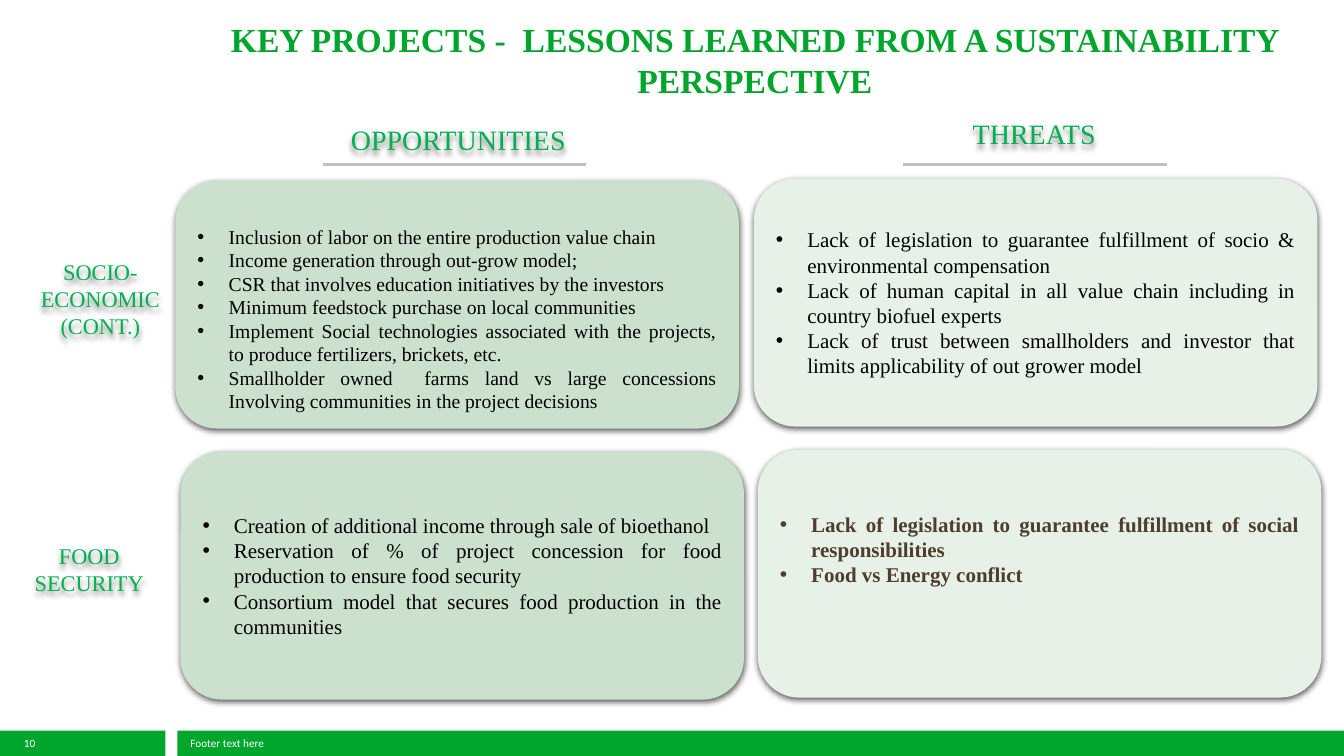
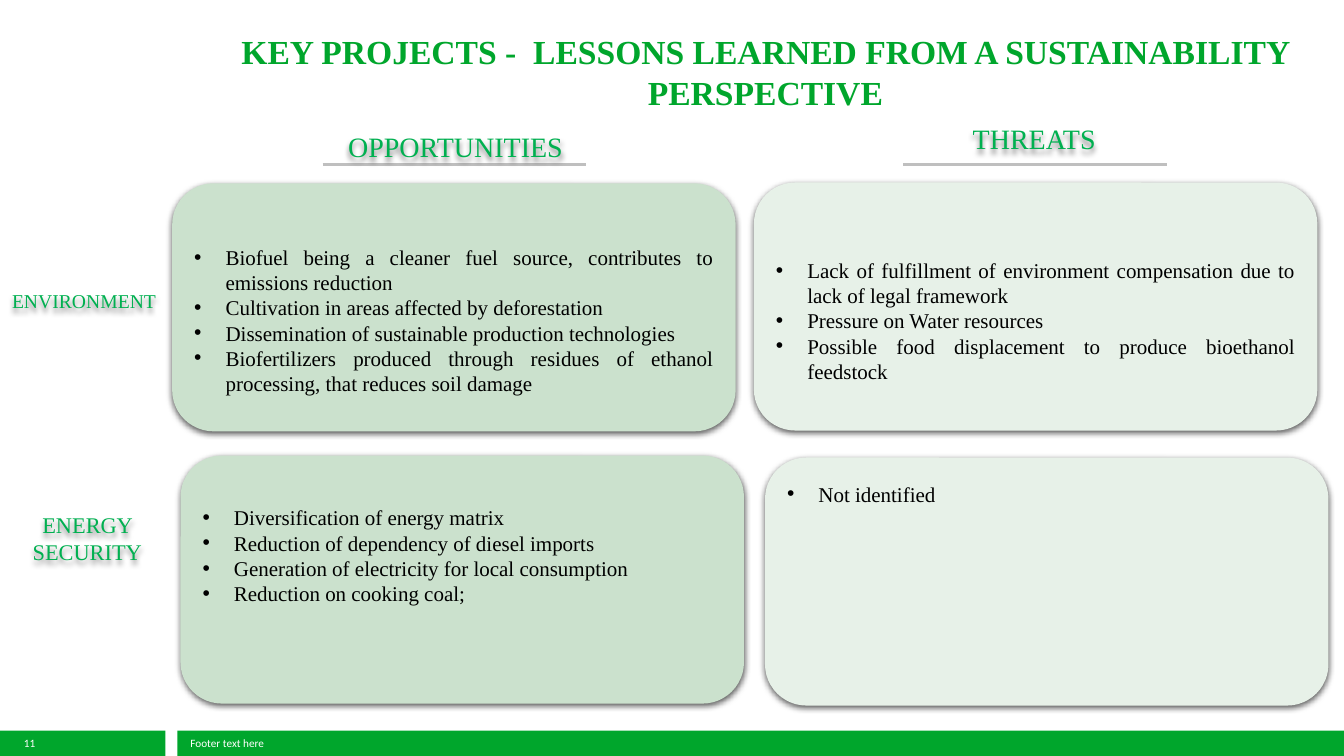
from dataclasses import dataclass
from typing import Any

from lxml import etree
from pptx import Presentation
from pptx.dml.color import RGBColor
from pptx.enum.shapes import MSO_CONNECTOR, MSO_SHAPE
from pptx.enum.text import MSO_ANCHOR, PP_ALIGN
from pptx.oxml.ns import qn
from pptx.util import Cm, Pt

# Enum members
RECT, ROUNDED = MSO_SHAPE.RECTANGLE, MSO_SHAPE.ROUNDED_RECTANGLE
STRAIGHT = MSO_CONNECTOR.STRAIGHT
TOP, MIDDLE = MSO_ANCHOR.TOP, MSO_ANCHOR.MIDDLE
LEFT, CENTER = PP_ALIGN.LEFT, PP_ALIGN.CENTER
RIGHT, JUSTIFY = PP_ALIGN.RIGHT, PP_ALIGN.JUSTIFY

# Colours
BRAND_GREEN = RGBColor(0x00, 0xA6, 0x2C)
LABEL_GREEN = RGBColor(0x00, 0xB0, 0x50)
OPPORTUNITY_FILL = RGBColor(0xCB, 0xE1, 0xCD)
THREAT_FILL = RGBColor(0xE7, 0xF1, 0xE8)
RULE_GREY = RGBColor(0xBF, 0xBF, 0xBF)
BROWN = RGBColor(0x4D, 0x3E, 0x2F)
BLACK = RGBColor(0x00, 0x00, 0x00)
WHITE = RGBColor(0xFF, 0xFF, 0xFF)

# Text formats
SERIF, SANS = "Times New Roman", "Calibri"
TITLE_FORMAT = {"name": SERIF, "size": Pt(24), "bold": True}
HEADING_FORMAT = {"name": SERIF, "size": Pt(20)}
FOOTER_FORMAT = {"name": SANS, "size": Pt(8)}

# Shared layout, in centimetres
SLIDE_W, SLIDE_H = 33.87, 19.05
CARD_W, CARD_H = 14.2, 6.25
LABEL_W, LABEL_H = 4.5, 3.28
HEADING_H = 1.04
TITLE_H = 2.31
FOOTER_H = 0.64
FOOTER_TOP = SLIDE_H - FOOTER_H
FOOTER_BANDS = ((0, 4.17), (4.47, SLIDE_W - 4.47))
RULE_Y, RULE_W = 4.14, 6.65
RULE_LEFTS = (8.13, 22.76)
INSET_Y = 0.13
BULLET_INDENT = 0.79

TITLE = "KEY PROJECTS -  LESSONS LEARNED FROM A SUSTAINABILITY PERSPECTIVE"
FOOTER = "Footer text here"


@dataclass(frozen=True)
class Box:
    left: float
    top: float
    width: float
    height: float


@dataclass(frozen=True)
class Shadow:
    blur: float
    distance: float
    opacity: int


@dataclass(frozen=True)
class Label:
    left: float
    top: float
    lines: tuple[str, ...]
    size: int = 16


@dataclass(frozen=True)
class Card:
    left: float
    top: float
    fill: RGBColor
    points: tuple[str, ...]
    drop: float = 0  # extra inset: above the text if positive, else below
    size: int = 15
    color: RGBColor = BLACK
    bold: bool = False


@dataclass(frozen=True)
class Page:
    number: int
    title: Box
    opportunities_at: tuple[float, float]
    threats_at: tuple[float, float]
    labels: tuple[Label, ...]
    cards: tuple[Card, ...]


CARD_SHADOW = Shadow(4.5, 1.5, 63)
LABEL_SHADOW = Shadow(4, 3, 50)

PAGES = (
    Page(
        10, Box(5.46, 0.36, 27.13, TITLE_H), (8.2, 2.99), (23.65, 2.84),
        (
            Label(0.28, 5.89, ("SOCIO-ECONOMIC", "(CONT.)")),
            Label(0, 12.7, ("FOOD SECURITY",)),
        ),
        (
            Card(19, 4.5, THREAT_FILL, (
                "Lack of legislation to guarantee fulfillment of socio & environmental compensation",
                "Lack of human capital in all value chain including in country biofuel experts",
                "Lack of trust between smallholders and investor that limits applicability"
                " of out grower model",
            )),
            Card(4.42, 4.55, OPPORTUNITY_FILL, (
                "Inclusion of labor on the entire production value chain",
                "Income generation through out-grow model;",
                "CSR that involves education initiatives by the investors",
                "Minimum feedstock purchase on local communities",
                "Implement Social technologies associated with the projects,"
                " to produce fertilizers, brickets, etc.",
                "Smallholder owned  farms land vs large concessions"
                " Involving communities in the project decisions",
            ), drop=0.71, size=14),
            Card(19.1, 11.33, THREAT_FILL, (
                "Lack of legislation to guarantee fulfillment of social responsibilities",
                "Food vs Energy conflict",
            ), drop=-1.22, color=BROWN, bold=True),
            Card(4.55, 11.38, OPPORTUNITY_FILL, (
                "Creation of additional income through sale of bioethanol",
                "Reservation of % of project concession for food production to ensure food security",
                "Consortium model that secures food production in the communities",
            )),
        ),
    ),
    Page(
        11, Box(5.36, 0.66, 27.86, TITLE_H), (8.13, 3.16), (23.65, 2.97),
        (
            Label(-0.13, 5.94, ("ENVIRONMENT",), size=14),
            Label(-0.05, 11.91, ("ENERGY SECURITY",)),
        ),
        (
            Card(19, 4.6, THREAT_FILL, (
                "Lack of fulfillment of environment compensation due to lack of legal framework",
                "Pressure on Water resources",
                "Possible food displacement to produce bioethanol feedstock",
            ), drop=0.71),
            Card(19.28, 11.53, THREAT_FILL, ("Not identified",), drop=-4.42),
            Card(4.55, 11.48, OPPORTUNITY_FILL, (
                "Diversification of energy matrix",
                "Reduction of dependency of diesel imports",
                "Generation of electricity for local consumption",
                "Reduction on cooking coal;",
            ), drop=-1.22),
            Card(4.34, 4.62, OPPORTUNITY_FILL, (
                "Biofuel being a cleaner fuel source, contributes to emissions reduction",
                "Cultivation in areas affected by deforestation",
                "Dissemination of sustainable production technologies",
                "Biofertilizers produced through residues of ethanol processing,"
                " that reduces soil damage",
            ), drop=0.64),
        ),
    ),
)


def place(box: Box) -> tuple[Cm, Cm, Cm, Cm]:
    return Cm(box.left), Cm(box.top), Cm(box.width), Cm(box.height)


def add_shadow(shape: Any, shadow: Shadow) -> None:
    shape.shadow.inherit = False
    effects = shape._element.spPr.find(qn("a:effectLst"))
    outer = etree.SubElement(
        effects, qn("a:outerShdw"), blurRad=str(Pt(shadow.blur)),
        dist=str(Pt(shadow.distance)), dir="5400000", algn="t", rotWithShape="0")
    color = etree.SubElement(outer, qn("a:srgbClr"), val=str(BLACK))
    etree.SubElement(color, qn("a:alpha"), val=str(shadow.opacity * 1000))


def add_bullet(paragraph: Any) -> None:
    properties = paragraph._p.get_or_add_pPr()
    properties.set("marL", str(Cm(BULLET_INDENT)))
    properties.set("indent", str(-Cm(BULLET_INDENT)))
    etree.SubElement(properties, qn("a:buFont"), typeface="Arial")
    etree.SubElement(properties, qn("a:buChar"), char="•")


def write(shape: Any, lines: tuple[str, ...], font_format: dict[str, Any], color: RGBColor,
          align: Any, anchor: Any = MIDDLE, bulleted: bool = False) -> None:
    frame = shape.text_frame
    frame.word_wrap = True
    frame.vertical_anchor = anchor
    for index, line in enumerate(lines):
        paragraph = frame.paragraphs[0] if index == 0 else frame.add_paragraph()
        paragraph.alignment = align
        if bulleted:
            add_bullet(paragraph)
        run = paragraph.add_run()
        run.text = line
        for attribute, value in font_format.items():
            setattr(run.font, attribute, value)
        run.font.color.rgb = color


def add_text(slide: Any, box: Box, lines: tuple[str, ...], font_format: dict[str, Any],
             color: RGBColor, align: Any = CENTER, anchor: Any = MIDDLE) -> Any:
    text = slide.shapes.add_textbox(*place(box))
    write(text, lines, font_format, color, align, anchor)
    return text


def add_panel(slide: Any, kind: Any, box: Box, fill: RGBColor) -> Any:
    panel = slide.shapes.add_shape(kind, *place(box))
    panel.fill.solid()
    panel.fill.fore_color.rgb = fill
    panel.line.fill.background()
    panel.shadow.inherit = False
    return panel


def add_footer(slide: Any, number: int) -> None:
    for left, width in FOOTER_BANDS:
        add_panel(slide, RECT, Box(left, FOOTER_TOP, width, FOOTER_H), BRAND_GREEN)
    add_text(slide, Box(4.55, FOOTER_TOP, 25.4, FOOTER_H), (FOOTER,),
             FOOTER_FORMAT, WHITE, LEFT)
    add_text(slide, Box(0, FOOTER_TOP, 1.14, FOOTER_H), (str(number),),
             FOOTER_FORMAT, WHITE, RIGHT)


def add_rule(slide: Any, left: float) -> None:
    rule = slide.shapes.add_connector(
        STRAIGHT, Cm(left), Cm(RULE_Y), Cm(left + RULE_W), Cm(RULE_Y))
    rule.line.color.rgb = RULE_GREY
    rule.line.width = Pt(2.25)
    etree.SubElement(rule._element.spPr, qn("a:effectLst"))


def add_card(slide: Any, card: Card) -> None:
    panel = add_panel(slide, ROUNDED, Box(card.left, card.top, CARD_W, CARD_H), card.fill)
    add_shadow(panel, CARD_SHADOW)
    panel.text_frame.margin_top = Cm(INSET_Y + max(card.drop, 0))
    panel.text_frame.margin_bottom = Cm(INSET_Y + max(-card.drop, 0))
    font_format = {"name": SERIF, "size": Pt(card.size), "bold": card.bold}
    write(panel, card.points, font_format, card.color, JUSTIFY, bulleted=True)


def add_page(prs: Any, page: Page) -> None:
    slide = prs.slides.add_slide(prs.slide_layouts[6])
    add_footer(slide, page.number)

    # Title and column headings
    add_text(slide, page.title, (TITLE,), TITLE_FORMAT, BRAND_GREEN, anchor=TOP)
    for left in RULE_LEFTS:
        add_rule(slide, left)
    headings = (("OPPORTUNITIES ", page.opportunities_at, 6.88),
                ("THREATS", page.threats_at, 4.83))
    for heading, (left, top), width in headings:
        text = add_text(slide, Box(left, top, width, HEADING_H), (heading,),
                        HEADING_FORMAT, LABEL_GREEN)
        add_shadow(text, LABEL_SHADOW)

    # Row labels and cards
    for label in page.labels:
        text = add_text(slide, Box(label.left, label.top, LABEL_W, LABEL_H), label.lines,
                        {"name": SERIF, "size": Pt(label.size)}, LABEL_GREEN)
        add_shadow(text, LABEL_SHADOW)
    for card in page.cards:
        add_card(slide, card)


def main() -> None:
    prs = Presentation()
    prs.slide_width, prs.slide_height = Cm(SLIDE_W), Cm(SLIDE_H)
    for page in PAGES:
        add_page(prs, page)
    prs.save("out.pptx")


if __name__ == "__main__":
    main()
